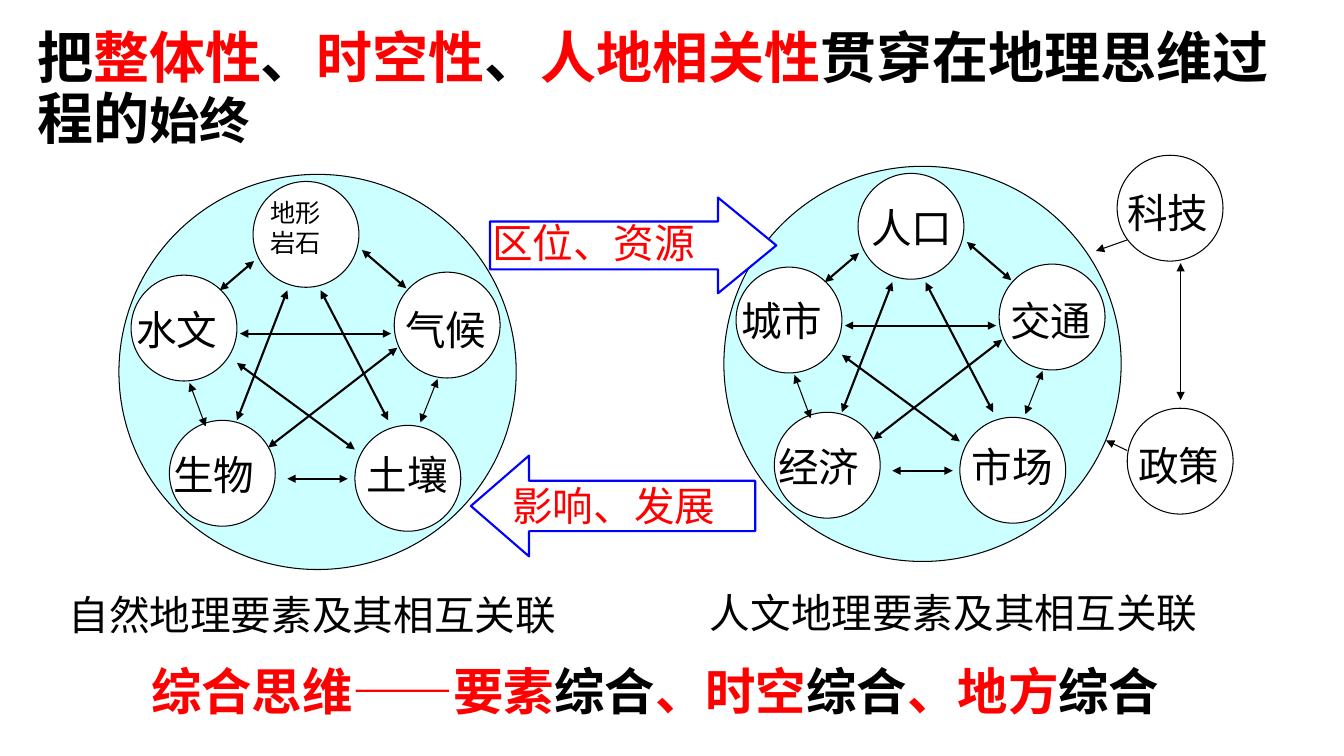
from dataclasses import dataclass

from lxml.etree import SubElement
from pptx import Presentation
from pptx.dml.color import RGBColor
from pptx.enum.shapes import MSO_CONNECTOR, MSO_SHAPE as Shape
from pptx.enum.text import MSO_ANCHOR as Anchor, MSO_AUTO_SIZE as AutoSize, PP_ALIGN as Align
from pptx.oxml.ns import qn
from pptx.util import Pt

PX = 9144  # one hundredth of an inch
FONT = "Noto Sans CJK SC"
BLACK = RGBColor(0, 0, 0)
WHITE = RGBColor(255, 255, 255)
RED = RGBColor(255, 0, 0)
BLUE = RGBColor(0, 0, 255)
PALE_CYAN = RGBColor(0xCC, 0xFF, 0xFF)
NODE = 105  # diameter of an element circle
THIN, THICK = 0.75, 1.5


@dataclass(frozen=True)
class Span:
    text: str
    color: RGBColor = BLACK
    size: int = 29
    bold: bool = False


@dataclass(frozen=True)
class Label:
    text: str
    left: int
    top: int
    width: int = 90
    height: int = 52
    size: int = 29
    color: RGBColor = BLACK


@dataclass(frozen=True)
class Arrow:
    start: tuple[int, int]
    end: tuple[int, int]
    weight: float = THICK
    both_ends: bool = True


@dataclass(frozen=True)
class System:
    dx: int
    dy: int
    labels: tuple[Label, ...]


# Circles and links shared by both systems, placed for the left one
NODES = ((251, 180), (391, 270), (130, 273), (352, 422), (168, 417))
LINKS = (
    Arrow((252, 259), (218, 288)),
    Arrow((188, 380), (204, 423), THIN),
    Arrow((285, 475), (345, 475)),
    Arrow((417, 419), (434, 376), THIN),
    Arrow((403, 286), (359, 248)),
    Arrow((285, 288), (235, 417)),
    Arrow((238, 331), (388, 331)),
    Arrow((318, 288), (385, 417)),
    Arrow((266, 444), (394, 345)),
    Arrow((352, 446), (235, 360)),
)
LABEL_SPOTS = ((402, 302), (135, 302), (172, 446), (364, 446))


def ring_labels(names: str) -> tuple[Label, ...]:
    return tuple(Label(name, *spot) for name, spot in zip(names.split(), LABEL_SPOTS))


SYSTEMS = (
    System(0, 0, (Label("地形\n岩石", 268, 196, 74, 84, 18),
                  *ring_labels("气候 水文 生物 土壤"))),
    System(600, -8, (Label("人口", 264, 209), *ring_labels("交通 城市 经济 市场"))),
)
BLOCK_ARROWS = (
    (Shape.LEFT_ARROW, (467, 452, 282, 100), 0.577),
    (Shape.RIGHT_ARROW, (486, 196, 284, 95), 0.609),
)
CAPTIONS = (
    Label("影响、发展", 508, 477, 242, color=RED),
    Label("区位、资源", 488, 216, 262, color=RED),
    Label("自然地理要素及其相互关联", 68, 585, 500),
    Label("人文地理要素及其相互关联", 704, 583, 500),
)
OUTSIDE_NODES = (
    ((1108, 154), Label("科技", 1118, 186)),
    ((1118, 405), Label("政策", 1129, 437)),
)
OUTSIDE_ARROWS = (
    Arrow((1118, 238), (1087, 249), THIN, False),
    Arrow((1118, 447), (1097, 437), THIN, False),
    Arrow((1171, 397), (1171, 261), THIN),
)
TITLE = (
    Span("把", BLACK, 40, True), Span("整体性", RED, 40, True),
    Span("、", BLACK, 40, True), Span("时空性", RED, 40, True),
    Span("、", BLACK, 40, True), Span("人地相关性", RED, 40, True),
    Span("贯穿在地理思维过程的", BLACK, 40, True), Span("始终", BLACK, 36, True),
)
SUMMARY = tuple(
    Span(text, color, 36, True)
    for lead in ("综合思维——要素", "、时空", "、地方")
    for text, color in ((lead, RED), ("综合", BLACK))
)


def add_spans(para, spans: tuple[Span, ...]) -> None:
    for span in spans:
        run = para.add_run()
        run.text = span.text
        font_format = {"name": FONT, "size": Pt(span.size), "bold": span.bold}
        for name, value in font_format.items():
            setattr(run.font, name, value)
        run.font.color.rgb = span.color
        SubElement(run.font._element, qn("a:ea"), typeface=FONT)


def add_box(page, bounds: tuple[int, ...], frame_format: dict):
    frame = page.shapes.add_textbox(*(value * PX for value in bounds)).text_frame
    for name, value in frame_format.items():
        setattr(frame, name, value)
    return frame


def add_label(page, label: Label, dx: int = 0, dy: int = 0) -> None:
    margins = {f"margin_{side}": 0 for side in ("left", "top", "right", "bottom")}
    bounds = (label.left + dx, label.top + dy, label.width, label.height)
    frame = add_box(page, bounds, {"word_wrap": True, **margins})
    for index, line in enumerate(label.text.split("\n")):
        para = frame.add_paragraph() if index else frame.paragraphs[0]
        para.alignment = Align.JUSTIFY
        add_spans(para, (Span(line, label.color, label.size),))


def add_figure(page, kind: Shape, bounds: tuple[int, ...], fill: RGBColor = WHITE,
               line: RGBColor = BLACK, weight: float = THIN):
    figure = page.shapes.add_shape(kind, *(value * PX for value in bounds))
    figure.shadow.inherit = False
    figure.fill.solid()
    figure.fill.fore_color.rgb = fill
    figure.line.color.rgb = line
    figure.line.width = Pt(weight)
    return figure


def add_arrow(page, arrow: Arrow, dx: int = 0, dy: int = 0) -> None:
    ends = [value * PX for x, y in (arrow.start, arrow.end) for value in (x + dx, y + dy)]
    link = page.shapes.add_connector(MSO_CONNECTOR.STRAIGHT, *ends)
    link.line.color.rgb = BLACK
    link.line.width = Pt(arrow.weight)
    outline = link.line._get_or_add_ln()
    for tag in ("a:headEnd", "a:tailEnd") if arrow.both_ends else ("a:tailEnd",):
        SubElement(outline, qn(tag), type="triangle")
    SubElement(link._element.spPr, qn("a:effectLst"))


def add_system(page, system: System) -> None:
    dx, dy = system.dx, system.dy
    add_figure(page, Shape.OVAL, (118 + dx, 173 + dy, 394, 392), PALE_CYAN)
    for left, top in NODES:
        add_figure(page, Shape.OVAL, (left + dx, top + dy, NODE, NODE))
    for label in system.labels:
        add_label(page, label, dx, dy)
    for link in LINKS:
        add_arrow(page, link, dx, dy)


def main() -> None:
    deck = Presentation()
    deck.slide_width, deck.slide_height = 1333 * PX, 750 * PX
    page = deck.slides.add_slide(deck.slide_layouts[6])

    # Title
    title = add_box(page, (27, 21, 1275, 138),
                    {"word_wrap": True, "vertical_anchor": Anchor.MIDDLE})
    title.paragraphs[0].line_spacing = 0.9
    add_spans(title.paragraphs[0], TITLE)

    # Natural and human systems
    for system in SYSTEMS:
        add_system(page, system)

    # Block arrows between the systems, and captions
    for kind, bounds, head_length in BLOCK_ARROWS:
        block = add_figure(page, kind, bounds, line=BLUE, weight=THICK)
        block.adjustments[1] = head_length
    for caption in CAPTIONS:
        add_label(page, caption)

    # Outside influences
    for (left, top), label in OUTSIDE_NODES:
        add_figure(page, Shape.OVAL, (left, top, NODE, NODE))
        add_label(page, label)
    for arrow in OUTSIDE_ARROWS:
        add_arrow(page, arrow)

    # Summary line
    summary = add_box(page, (140, 650, 1033, 71),
                      {"word_wrap": False, "auto_size": AutoSize.SHAPE_TO_FIT_TEXT})
    add_spans(summary.paragraphs[0], SUMMARY)

    deck.save("out.pptx")


if __name__ == "__main__":
    main()
